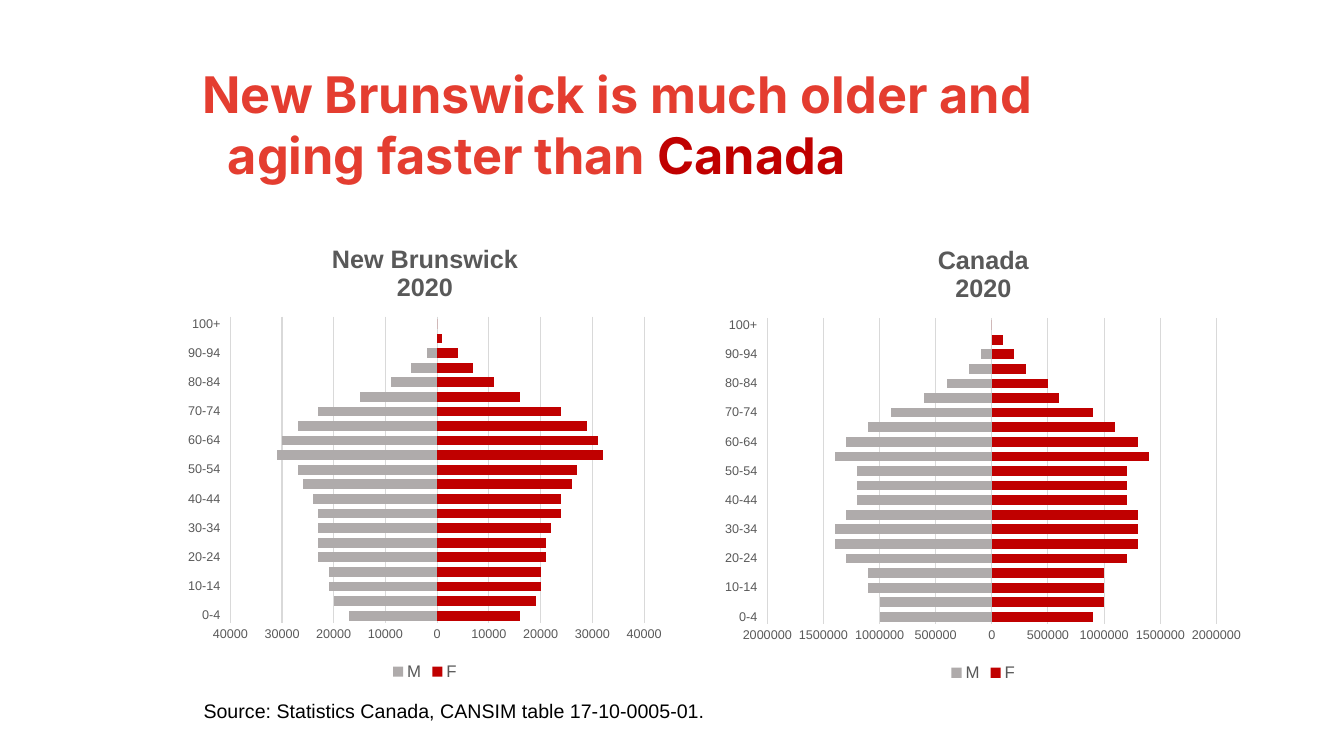
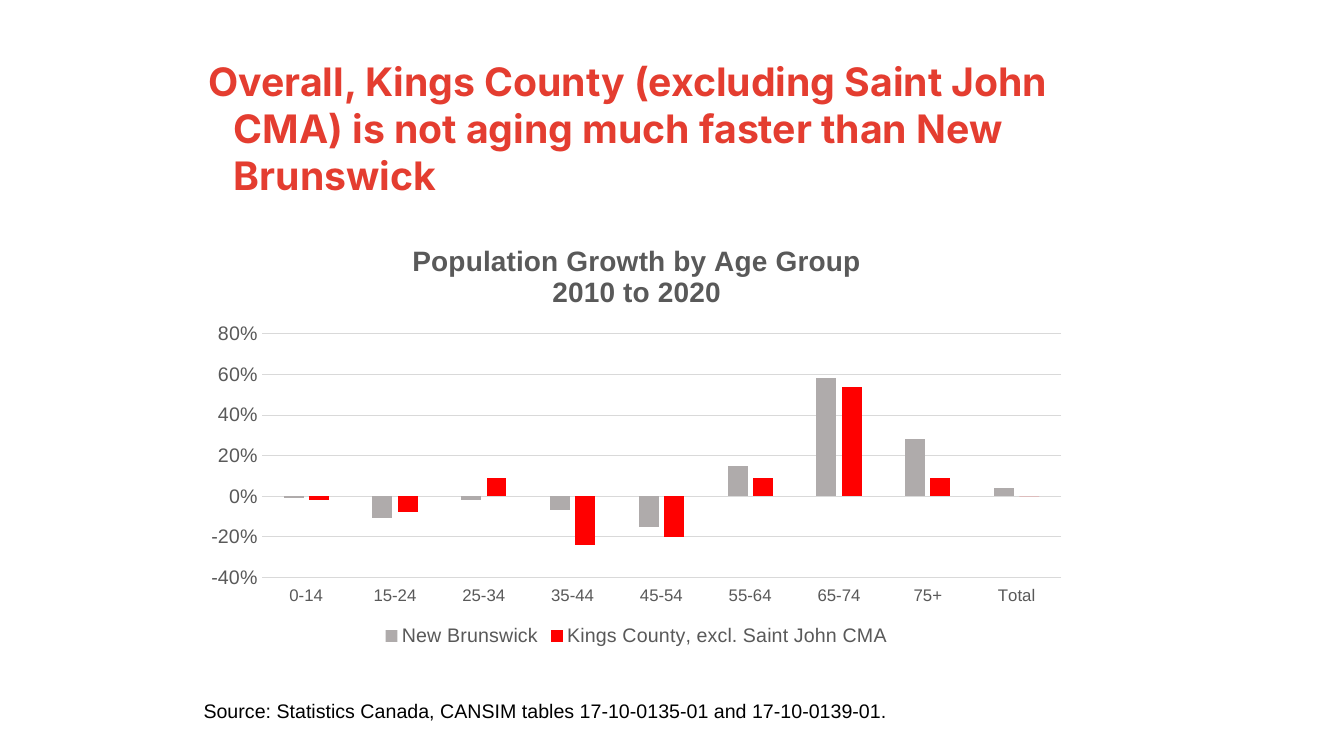
from dataclasses import dataclass
from typing import Any

from lxml import etree
from pptx import Presentation, util as u
from pptx.chart import data as chart_data
from pptx.dml import color
from pptx.enum import chart as ce, text as te

GREY_TEXT = "595959"
GRID = "D9D9D9"
MALE_GREY = "AFABAB"
DARK_RED = "C00000"
HEADING_RED = "E43D30"
CHART_NS = "http://schemas.openxmlformats.org/drawingml/2006/chart"

AGE_BANDS = [f"{age}-{age + 4}" for age in range(0, 100, 5)] + ["100+"]
GROWTH_GROUPS = ["0-14", "15-24", "25-34", "35-44", "45-54", "55-64", "65-74", "75+", "Total"]


@dataclass(frozen=True)
class Box:
    """Left, top, width and height in centimetres."""
    left: float
    top: float
    width: float
    height: float

    def lengths(self) -> tuple[u.Length, ...]:
        return tuple(u.Cm(v) for v in (self.left, self.top, self.width, self.height))


@dataclass(frozen=True)
class Series:
    name: str
    fill: str
    values: list[float]


@dataclass(frozen=True)
class ChartStyle:
    kind: Any
    gap: int
    overlap: int
    number_format: str
    title_size: int
    category_size: int
    value_size: int
    legend_size: int


@dataclass(frozen=True)
class ChartSpec:
    box: Box
    plot: tuple[float, float, float, float]  # per cent of the chart: x, y, w, h
    title: list[str]
    style: ChartStyle
    categories: list[str]
    series: list[Series]
    scale: tuple[float, float, float]  # minimum, maximum, step


@dataclass(frozen=True)
class SlideSpec:
    heading_box: Box
    heading_size: int
    heading: list[tuple[str, str]]  # wording, colour
    charts: list[ChartSpec]
    source: str


PYRAMID = ChartStyle(ce.XL_CHART_TYPE.BAR_STACKED, 50, 100, "0;0", 18, 9, 9, 12)
GROWTH = ChartStyle(ce.XL_CHART_TYPE.COLUMN_CLUSTERED, 219, -27, "0%", 20, 12, 14, 14)
SOURCE_BOX = Box(4.88, 17.48, 23.77, 0.86)


def sexes(unit: int, males: list[int], females: list[int]) -> list[Series]:
    """Men extend to the left of zero, women to the right."""
    return [Series("M", MALE_GREY, [-unit * n for n in males]),
            Series("F", DARK_RED, [unit * n for n in females])]


SLIDES = [
    SlideSpec(
        Box(4.22, 1.47, 24.66, 3.3), 36,
        [("New Brunswick is much older and aging faster than ", HEADING_RED),
         ("Canada", DARK_RED)],
        [
            ChartSpec(
                Box(4.5, 5.69, 12.42, 11.56), (10.5, 19.8, 84, 66.8),
                ["New Brunswick", "2020"], PYRAMID, AGE_BANDS,
                sexes(1000,
                      [17, 20, 21, 21, 23, 23, 23, 23, 24, 26, 27,
                       31, 30, 27, 23, 15, 9, 5, 2, 0, 0],
                      [16, 19, 20, 20, 21, 21, 22, 24, 24, 26, 27,
                       32, 31, 29, 24, 16, 11, 7, 4, 1, 0]),
                (-40000, 40000, 10000)),
            ChartSpec(
                Box(18.01, 5.72, 13.54, 11.56), (9.8, 19.8, 83.6, 66.8),
                ["Canada", "2020"], PYRAMID, AGE_BANDS,
                sexes(100000,
                      [10, 10, 11, 11, 13, 14, 14, 13, 12, 12, 12,
                       14, 13, 11, 9, 6, 4, 2, 1, 0, 0],
                      [9, 10, 10, 10, 12, 13, 13, 13, 12, 12, 12,
                       14, 13, 11, 9, 6, 5, 3, 2, 1, 0]),
                (-2000000, 2000000, 500000)),
        ],
        "Source: Statistics Canada, CANSIM table 17-10-0005-01."),
    SlideSpec(
        Box(4.37, 1.32, 24.66, 3.94), 28,
        [("Overall, Kings County (excluding Saint John CMA) is not aging "
          "much faster than New Brunswick", HEADING_RED)],
        [
            ChartSpec(
                Box(4.88, 5.72, 22.33, 10.69), (7.7, 25.2, 90.2, 57.4),
                ["Population Growth by Age Group", "2010 to 2020"], GROWTH, GROWTH_GROUPS,
                [Series("New Brunswick", MALE_GREY,
                        [-0.01, -0.11, -0.02, -0.07, -0.15, 0.15, 0.58, 0.28, 0.04]),
                 Series("Kings County, excl. Saint John CMA", "FF0000",
                        [-0.02, -0.08, 0.09, -0.24, -0.2, 0.09, 0.54, 0.09, 0])],
                (-0.4, 0.8, 0.2)),
        ],
        "Source: Statistics Canada, CANSIM tables 17-10-0135-01 and 17-10-0139-01."),
]


def rgb(value: str) -> color.RGBColor:
    return color.RGBColor.from_string(value)


def set_all(target: Any, formats: dict[str, Any]) -> None:
    for attribute, value in formats.items():
        setattr(target, attribute, value)


def style_font(font: Any, size: float, fill: str, bold: bool = False, name: str = "Arial") -> None:
    set_all(font, {"name": name, "size": u.Pt(size), "bold": bold})
    font.color.rgb = rgb(fill)


def style_line(line: Any) -> None:
    line.color.rgb = rgb(GRID)
    line.width = u.Pt(0.75)


def add_heading(slide: Any, spec: SlideSpec) -> None:
    heading = slide.shapes.title
    set_all(heading, dict(zip(("left", "top", "width", "height"), spec.heading_box.lengths())))
    frame = heading.text_frame
    set_all(frame, {"word_wrap": True, "auto_size": te.MSO_AUTO_SIZE.NONE,
                    "vertical_anchor": te.MSO_ANCHOR.TOP})
    paragraph = frame.paragraphs[0]
    paragraph.alignment = te.PP_ALIGN.LEFT
    properties = paragraph._p.get_or_add_pPr()
    properties.set("marL", str(u.Cm(1.27)))
    properties.set("indent", str(-u.Cm(0.64)))
    for wording, fill in spec.heading:
        run = paragraph.add_run()
        run.text = wording
        style_font(run.font, spec.heading_size, fill, True, "Inter")


def add_source(slide: Any, wording: str) -> None:
    frame = slide.shapes.add_textbox(*SOURCE_BOX.lengths()).text_frame
    set_all(frame, {"word_wrap": True, "auto_size": te.MSO_AUTO_SIZE.SHAPE_TO_FIT_TEXT})
    run = frame.paragraphs[0].add_run()
    run.text = wording
    style_font(run.font, 14, "000000")


def place_plot(chart: Any, plot: tuple[float, float, float, float]) -> None:
    """Fix the inner plot area, given in per cent of the chart."""
    area = chart.element.find(f".//{{{CHART_NS}}}plotArea")
    for old in area.findall(f"{{{CHART_NS}}}layout"):
        area.remove(old)
    layout = etree.Element(f"{{{CHART_NS}}}layout")
    manual = etree.SubElement(layout, f"{{{CHART_NS}}}manualLayout")
    settings = [("layoutTarget", "inner"), ("xMode", "edge"), ("yMode", "edge")]
    settings += [(side, f"{share / 100:.3f}") for side, share in zip("xywh", plot)]
    for tag, value in settings:
        etree.SubElement(manual, f"{{{CHART_NS}}}{tag}").set("val", value)
    area.insert(0, layout)


def style_axes(chart: Any, spec: ChartSpec) -> None:
    style = spec.style
    ages, amounts = chart.category_axis, chart.value_axis
    for axis, size in ((ages, style.category_size), (amounts, style.value_size)):
        set_all(axis, {"major_tick_mark": ce.XL_TICK_MARK.NONE,
                       "minor_tick_mark": ce.XL_TICK_MARK.NONE})
        style_font(axis.tick_labels.font, size, GREY_TEXT)
    ages.tick_label_position = ce.XL_TICK_LABEL_POSITION.LOW
    ages.has_major_gridlines = False
    style_line(ages.format.line)
    low, high, step = spec.scale
    set_all(amounts, {"minimum_scale": low, "maximum_scale": high, "major_unit": step,
                      "has_major_gridlines": True})
    set_all(amounts.tick_labels, {"number_format": style.number_format,
                                  "number_format_is_linked": False})
    style_line(amounts.major_gridlines.format.line)
    amounts.format.line.fill.background()


def add_chart(slide: Any, spec: ChartSpec) -> None:
    style = spec.style
    figures = chart_data.CategoryChartData(number_format=style.number_format)
    figures.categories = spec.categories
    for series in spec.series:
        figures.add_series(series.name, series.values)
    chart = slide.shapes.add_chart(style.kind, *spec.box.lengths(), figures).chart
    style_font(chart.font, 10, "000000")

    set_all(chart, {"has_title": True, "has_legend": True})
    title = chart.chart_title.text_frame
    for index, line in enumerate(spec.title):
        paragraph = title.add_paragraph() if index else title.paragraphs[0]
        run = paragraph.add_run()
        run.text = line
        style_font(run.font, style.title_size, GREY_TEXT, True)
    chart.chart_title.include_in_layout = False
    set_all(chart.legend, {"position": ce.XL_LEGEND_POSITION.BOTTOM,
                           "include_in_layout": False})
    style_font(chart.legend.font, style.legend_size, GREY_TEXT)

    plot = chart.plots[0]
    set_all(plot, {"gap_width": style.gap, "overlap": style.overlap,
                   "vary_by_categories": False})
    for bars, series in zip(plot.series, spec.series):
        bars.invert_if_negative = False
        bars.format.fill.solid()
        bars.format.fill.fore_color.rgb = rgb(series.fill)
    style_axes(chart, spec)
    place_plot(chart, spec.plot)


def main() -> None:
    deck = Presentation()
    set_all(deck, {"slide_width": u.Cm(33.87), "slide_height": u.Cm(19.05)})
    title_only = deck.slide_layouts[5]
    for spec in SLIDES:
        slide = deck.slides.add_slide(title_only)
        add_heading(slide, spec)
        for chart in spec.charts:
            add_chart(slide, chart)
        add_source(slide, spec.source)
    deck.save("out.pptx")


if __name__ == "__main__":
    main()
